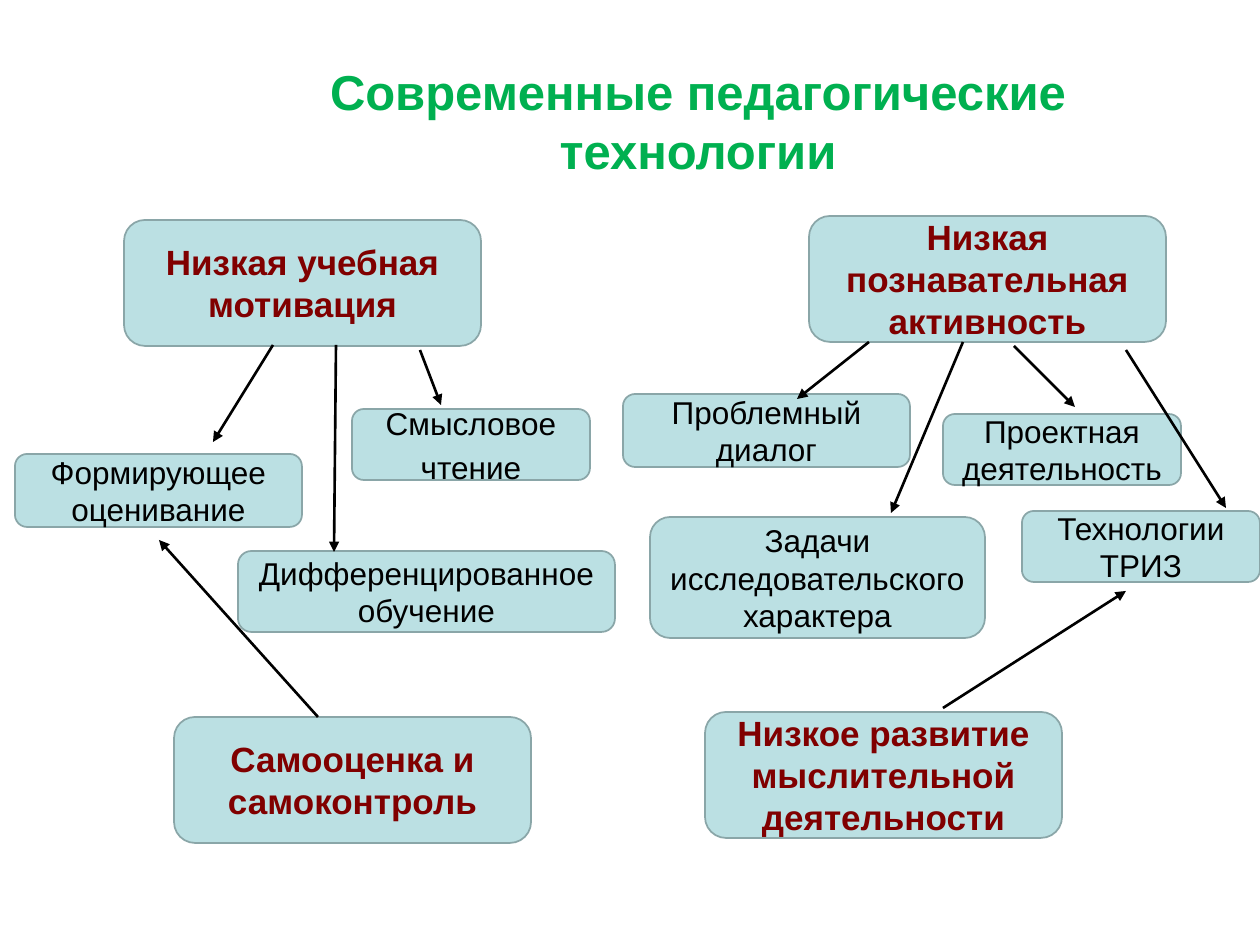
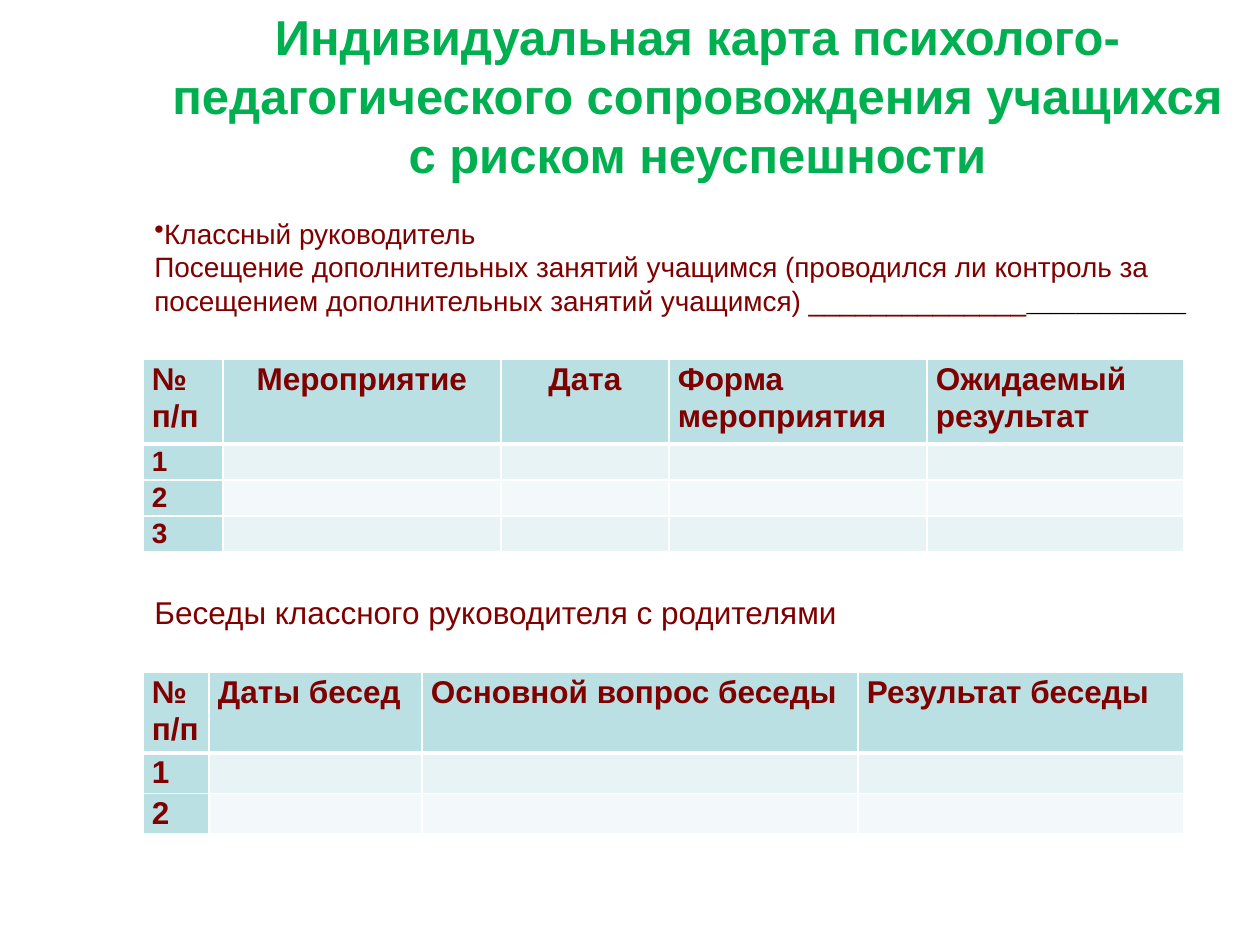
from lxml import etree
from pptx import Presentation
from pptx.dml.color import RGBColor
from pptx.enum.shapes import MSO_CONNECTOR, MSO_SHAPE
from pptx.enum.text import MSO_ANCHOR, PP_ALIGN
from pptx.oxml.ns import qn
from pptx.util import Emu, Pt

STRAIGHT, ROUNDED = MSO_CONNECTOR.STRAIGHT, MSO_SHAPE.ROUNDED_RECTANGLE
MIDDLE, LEFT, CENTER = MSO_ANCHOR.MIDDLE, PP_ALIGN.LEFT, PP_ALIGN.CENTER

PX_PER_INCH = 126
GREEN, MAROON, BLACK, WHITE = "00B050", "800000", "000000", "FFFFFF"
TEAL, TEAL_EDGE = "BBE0E3", "8AA6A8"
BANDS = ["E7F3F4", "F3F9FA"]
FONT = "Arial"

# Slide 1: problems share one size; left, top, text
TECH_TITLE = ("Современные педагогические технологии", (199, 36, 998, 169))
PROBLEM_SIZE = (357, 126)
PROBLEMS = [
    (124, 220, "Низкая учебная мотивация"),
    (809, 216, "Низкая познавательная активность"),
    (174, 717, "Самооценка и самоконтроль"),
    (705, 712, "Низкое развитие мыслительной деятельности"),
]
# Technologies: left, top, width, height, text
TECHNOLOGIES = [
    (15, 454, 287, 73, "Формирующее оценивание"),
    (352, 409, 238, 71, "Смысловое\nчтение"),
    (238, 551, 377, 81, "Дифференцированное обучение"),
    (623, 394, 287, 73, "Проблемный диалог"),
    (650, 517, 335, 121, "Задачи исследовательского характера"),
    (1022, 511, 238, 71, "Технологии ТРИЗ"),
    (943, 414, 238, 71, "Проектная деятельность"),
]
# Arrows from problems to technologies: start x, y, end x, y
ARROWS = [
    (273, 345, 213, 442), (336, 345, 334, 552), (420, 350, 441, 405),
    (869, 342, 797, 399), (1014, 346, 1075, 407), (963, 342, 891, 513),
    (1126, 350, 1226, 508), (318, 717, 159, 540), (943, 708, 1126, 591),
]

# Slide 2
CARD_TITLE = ("Индивидуальная карта психолого-педагогического сопровождения "
              "учащихся с риском неуспешности", (142, 0, 1111, 190))
TEACHER = "Классный руководитель"
ATTENDANCE = ("Посещение дополнительных занятий учащимся (проводился ли контроль "
              "за посещением дополнительных занятий учащимся) ______________")
ATTENDANCE_END = "_____________"
ATTENDANCE_AREA = (142, 209, 1072, 115)
TALKS = ("Беседы классного руководителя с родителями", (142, 586, 1042, 51))
TABLES = [
    {"at": (143, 359), "header_height": 85, "row_height": 36, "rows": 3,
     "number_size": 16, "centered": (1, 2),
     "columns": [("№ п/п", 80), ("Мероприятие", 278), ("Дата", 168),
                 ("Форма мероприятия", 258), ("Ожидаемый результат", 257)]},
    {"at": (143, 672), "header_height": 80, "row_height": 40, "rows": 2,
     "number_size": 18, "centered": (),
     "columns": [("№ п/п", 66), ("Даты бесед", 213),
                 ("Основной вопрос беседы", 436), ("Результат беседы", 326)]},
]


def px(value):
    return Emu(round(value * 914400 / PX_PER_INCH))


def color(value):
    return RGBColor.from_string(value)


def style(run, size, ink, bold=False, font=FONT):
    run.font.size, run.font.bold, run.font.name = Pt(size), bold, font
    run.font.color.rgb = color(ink)


def write(frame, text, size, ink, bold=False, align=LEFT):
    frame.word_wrap = True
    frame.vertical_anchor = MIDDLE
    frame.text = text
    for paragraph in frame.paragraphs:
        paragraph.alignment = align
        for run in paragraph.runs:
            style(run, size, ink, bold)


def add_text(slide, text, area, size, ink, bold=False, align=LEFT):
    frame = slide.shapes.add_textbox(*map(px, area)).text_frame
    write(frame, text, size, ink, bold, align)
    return frame


def add_title(slide, text, area):
    add_text(slide, text, area, 28, GREEN, True, CENTER)


def add_box(slide, area, text, size, ink, bold=False):
    box = slide.shapes.add_shape(ROUNDED, *map(px, area))
    box.shadow.inherit = False
    box.fill.solid()
    box.fill.fore_color.rgb = color(TEAL)
    box.line.color.rgb = color(TEAL_EDGE)
    box.line.width = Pt(1)
    write(box.text_frame, text, size, ink, bold, CENTER)
    for paragraph in box.text_frame.paragraphs[1:]:
        paragraph.space_before = Pt(size * 0.2)


def add_arrow(slide, ends):
    arrow = slide.shapes.add_connector(STRAIGHT, *map(px, ends))
    arrow.line.color.rgb = color(BLACK)
    arrow.line.width = Pt(1.5)
    properties = arrow._element.spPr
    etree.SubElement(properties.find(qn("a:ln")), qn("a:tailEnd"), type="triangle")
    etree.SubElement(properties, qn("a:effectLst"))


def border(cell, widths):
    """Draw white cell edges; widths run left, right, top, bottom."""
    properties = cell._tc.get_or_add_tcPr()
    for place, (side, width) in enumerate(zip("LRTB", widths)):
        line = etree.Element(qn(f"a:ln{side}"), w=str(Pt(width)))
        fill = etree.SubElement(line, qn("a:solidFill"))
        etree.SubElement(fill, qn("a:srgbClr"), val=WHITE)
        properties.insert(place, line)


def fill_cell(cell, text, size, fill, align, edges):
    cell.margin_left = cell.margin_right = px(9)
    cell.margin_top = cell.margin_bottom = 0
    cell.fill.solid()
    cell.fill.fore_color.rgb = color(fill)
    border(cell, edges)
    paragraph = cell.text_frame.paragraphs[0]
    paragraph.alignment = align
    paragraph.line_spacing = 1.07
    if text:
        paragraph.text = text
        style(paragraph.runs[0], size, MAROON, True)
    else:
        paragraph._p.get_or_add_endParaRPr().set("sz", str(size * 100))


def add_record_table(slide, record):
    columns = record["columns"]
    heights = [record["header_height"]] + [record["row_height"]] * record["rows"]
    width = sum(column_width for _, column_width in columns)
    area = (*record["at"], width, sum(heights))
    table = slide.shapes.add_table(len(heights), len(columns), *map(px, area)).table
    for row, height in zip(table.rows, heights):
        row.height = px(height)
    for c, (heading, column_width) in enumerate(columns):
        table.columns[c].width = px(column_width)
        align = CENTER if c in record["centered"] else LEFT
        fill_cell(table.cell(0, c), heading, 18, TEAL, align, (1, 1, 1, 3))
        for r in range(1, len(heights)):
            number = str(r) if c == 0 else ""
            fill = TEAL if c == 0 else BANDS[(r - 1) % 2]
            edges = (1, 1, 3 if r == 1 else 1, 1)
            fill_cell(table.cell(r, c), number, record["number_size"], fill, LEFT, edges)


def build_technologies(slide):
    add_title(slide, *TECH_TITLE)
    for left, top, text in PROBLEMS:
        add_box(slide, (left, top, *PROBLEM_SIZE), text, 20, MAROON, True)
    for *area, text in TECHNOLOGIES:
        add_box(slide, area, text, 18, BLACK)
    for ends in ARROWS:
        add_arrow(slide, ends)


def build_card(slide):
    add_title(slide, *CARD_TITLE)
    attendance = add_text(slide, f"{TEACHER}\n{ATTENDANCE}", ATTENDANCE_AREA, 16, MAROON)
    teacher, visits = attendance.paragraphs
    etree.SubElement(teacher._p.get_or_add_pPr(), qn("a:buChar"), char="•")
    blank_line = visits.add_run()
    blank_line.text = ATTENDANCE_END
    style(blank_line, 14, BLACK, font="Times New Roman")
    add_text(slide, *TALKS, 18, MAROON)
    for record in TABLES:
        add_record_table(slide, record)


def main():
    deck = Presentation()
    deck.slide_width, deck.slide_height = px(1260), px(945)
    for build in (build_technologies, build_card):
        build(deck.slides.add_slide(deck.slide_layouts[6]))
    deck.save("out.pptx")


if __name__ == "__main__":
    main()
